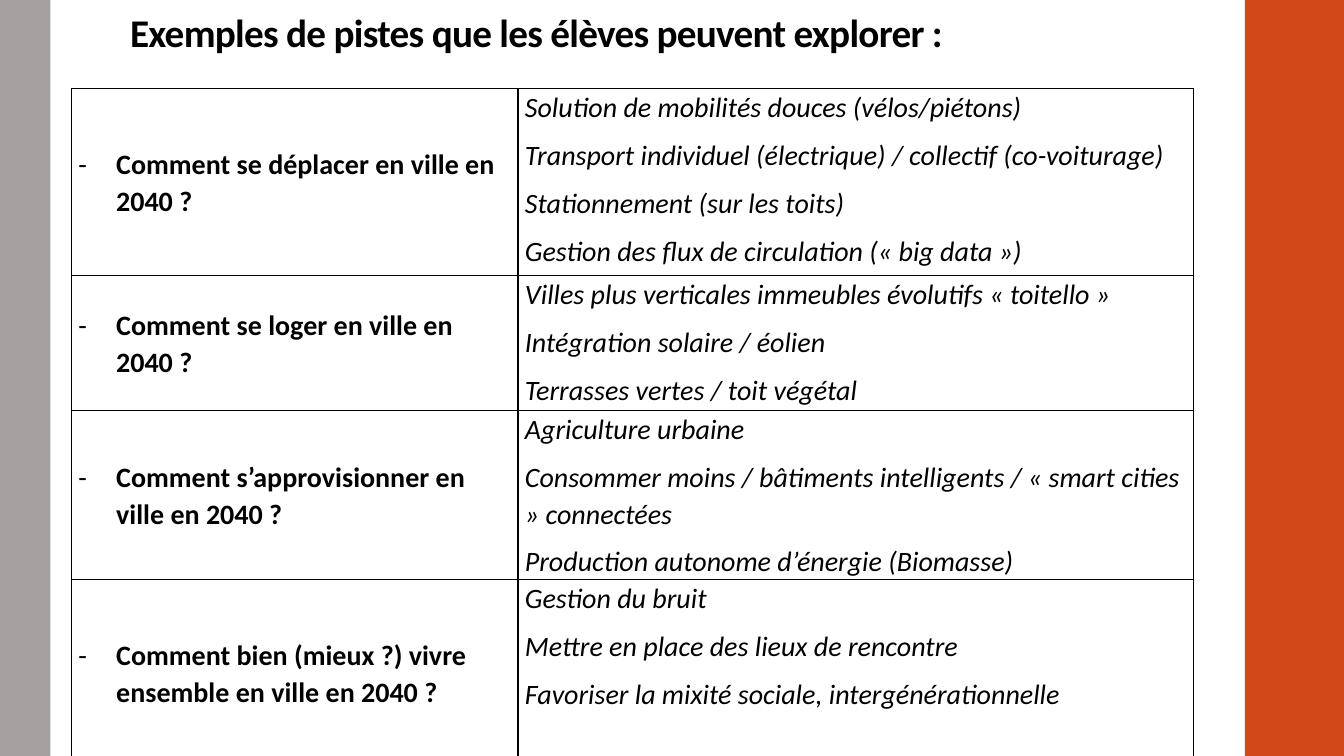
from dataclasses import dataclass

from lxml import etree
from pptx import Presentation
from pptx.dml.color import RGBColor
from pptx.enum.shapes import MSO_SHAPE
from pptx.enum.text import MSO_ANCHOR, MSO_AUTO_SIZE, PP_ALIGN
from pptx.oxml.ns import qn
from pptx.util import Pt

RECT = MSO_SHAPE.RECTANGLE
MIDDLE, TOP = MSO_ANCHOR.MIDDLE, MSO_ANCHOR.TOP
LEFT = PP_ALIGN.LEFT
FIXED = MSO_AUTO_SIZE.NONE
FONT = "Calibri"
BLACK = "000000"
WIDE, HIGH = 960, 540


@dataclass
class Bar:
    left: float
    width: float
    color: str


@dataclass
class Topic:
    height: float
    question: str
    ideas: list[str]


BARS = [Bar(889.2, 72, "D34817"), Bar(0, 36, "A6A1A1")]

TOPICS = [
    Topic(133.6, "Comment se déplacer en ville en 2040 ?", [
        "Solution de mobilités douces (vélos/piétons)",
        "Transport individuel (électrique) / collectif (co-voiturage)",
        "Stationnement (sur les toits)",
        "Gestion des flux de circulation (« big data »)"]),
    Topic(96.4, "Comment se loger en ville en 2040 ?", [
        "Villes plus verticales immeubles évolutifs « toitello »",
        "Intégration solaire / éolien",
        "Terrasses vertes / toit végétal"]),
    Topic(120.7, "Comment s’approvisionner en ville en 2040 ?", [
        "Agriculture urbaine",
        "Consommer moins / bâtiments intelligents / « smart cities » connectées",
        "Production autonome d’énergie (Biomasse)"]),
    Topic(133.6, "Comment bien (mieux ?) vivre ensemble en ville en 2040 ?", [
        "Gestion du bruit",
        "Mettre en place des lieux de rencontre",
        "Favoriser la mixité sociale, intergénérationnelle"]),
]


def paint(target, color: str) -> None:
    """Fill a shape with a solid colour."""
    target.fill.solid()
    target.fill.fore_color.rgb = RGBColor.from_string(color)


def write(frame, lines: list[str], *, size: float = 20, bold: bool = False,
          italic: bool = False, color: str = BLACK, space: float = 1,
          after: float = 0, track: int = 0, hang: float = 0,
          bullet: str = "") -> None:
    """Write each line as a paragraph with the given format."""
    for i, line in enumerate(lines):
        para = frame.add_paragraph() if i else frame.paragraphs[0]
        para.alignment = LEFT
        para.line_spacing = space
        para.space_after = Pt(after)
        run = para.add_run()
        run.text = line
        font = run.font
        font.name, font.size = FONT, Pt(size)
        font.bold, font.italic = bold, italic
        font.color.rgb = RGBColor.from_string(color)
        if track:
            font._element.set("spc", str(track))
        if bullet:
            props = para._p.get_or_add_pPr()
            props.set("marL", str(Pt(hang)))
            props.set("indent", str(-Pt(hang)))
            etree.SubElement(props, qn("a:buFont")).set("typeface", FONT)
            etree.SubElement(props, qn("a:buChar")).set("char", bullet)


def draw_bar(slide, bar: Bar) -> None:
    shape = slide.shapes.add_shape(RECT, Pt(bar.left), 0, Pt(bar.width), Pt(HIGH))
    shape.shadow.inherit = False
    paint(shape, bar.color)
    shape.line.fill.background()


def set_cell(cell, anchor: MSO_ANCHOR) -> None:
    """Give a cell thin black borders, no fill and tight margins."""
    cell.vertical_anchor = anchor
    cell.margin_left = cell.margin_right = Pt(5)
    cell.margin_top = cell.margin_bottom = 0
    props = cell._tc.get_or_add_tcPr()
    for side in ("lnL", "lnR", "lnT", "lnB"):
        line = etree.SubElement(props, qn(f"a:{side}"), w=str(Pt(1)))
        fill = etree.SubElement(line, qn("a:solidFill"))
        etree.SubElement(fill, qn("a:srgbClr"), val=BLACK)
    cell.fill.background()


def draw_table(slide, topics: list[Topic]) -> None:
    widths = (319, 482.4)
    high = sum(topic.height for topic in topics)
    table = slide.shapes.add_table(len(topics), 2, Pt(51), Pt(63.2),
                                   Pt(sum(widths)), Pt(high)).table
    table.first_row = table.horz_banding = False
    for col, width in zip(table.columns, widths):
        col.width = Pt(width)
    for row, topic in zip(table.rows, topics):
        row.height = Pt(topic.height)
        ask, answer = row.cells
        set_cell(ask, MIDDLE)
        set_cell(answer, TOP)
        write(ask.text_frame, [topic.question], bold=True, space=1.07,
              after=8, hang=27, bullet="-")
        write(answer.text_frame, topic.ideas, italic=True, space=1.07, after=8)


def draw_title(slide, text: str) -> None:
    title = slide.shapes.title
    title.left, title.top = Pt(85.7), 0
    title.width, title.height = Pt(602), Pt(63.2)
    frame = title.text_frame
    frame.auto_size = FIXED
    frame.word_wrap = False
    frame.vertical_anchor = MIDDLE
    frame.margin_bottom = Pt(21)
    write(frame, [text], size=28, bold=True, track=-50)


def main() -> None:
    deck = Presentation()
    deck.slide_width, deck.slide_height = Pt(WIDE), Pt(HIGH)
    slide = deck.slides.add_slide(deck.slide_layouts[5])

    # Side bars
    for bar in BARS:
        draw_bar(slide, bar)

    # Heading and table of topics
    draw_title(slide, "Exemples de pistes que les élèves peuvent explorer :")
    draw_table(slide, TOPICS)

    deck.save("out.pptx")


if __name__ == "__main__":
    main()
